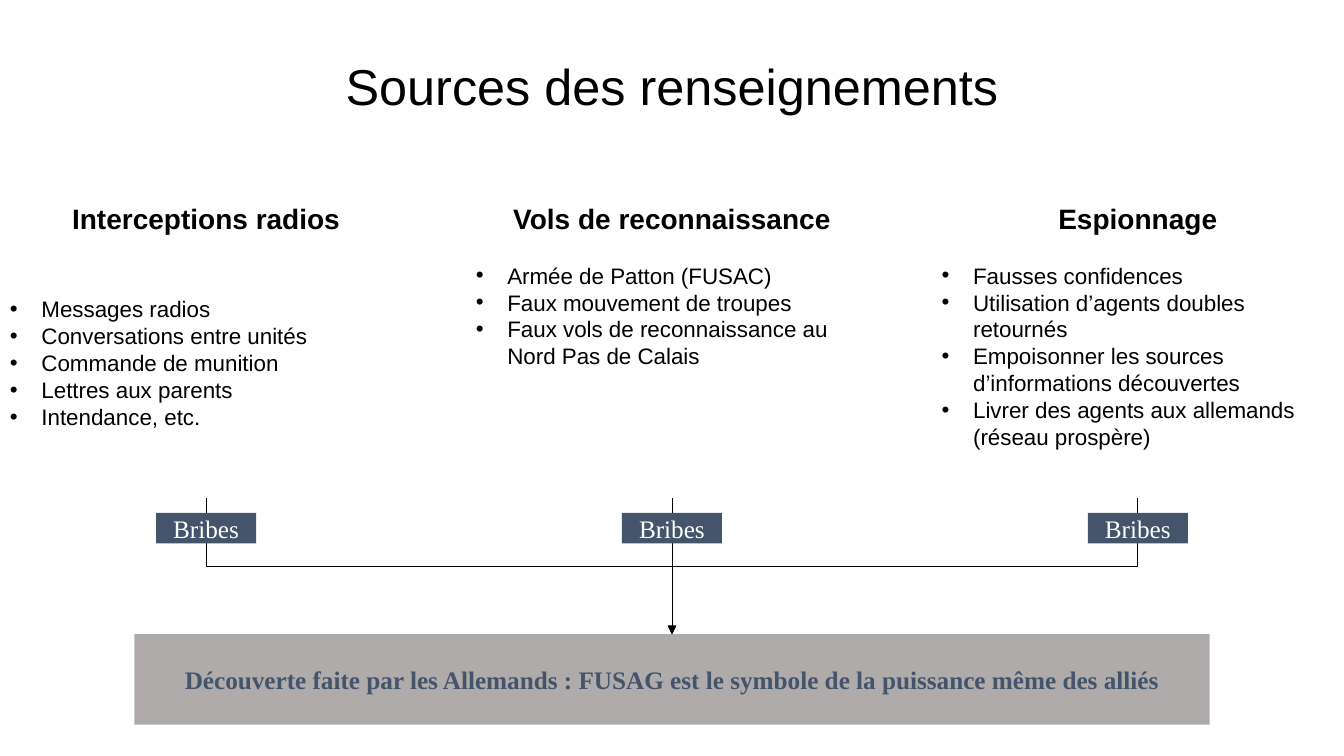
from lxml import etree
from pptx import Presentation
from pptx.dml.color import RGBColor
from pptx.enum import shapes, text
from pptx.oxml import ns
from pptx.util import Pt

TITLE = "Sources des renseignements"
# heading, space below the heading, bullets
COLUMNS = [
    ("Interceptions radios", 43.2, [
        "Messages radios", "Conversations entre unités", "Commande de munition",
        "Lettres aux parents", "Intendance, etc."]),
    ("Vols de reconnaissance", 19.1, [
        "Armée de Patton (FUSAC)", "Faux mouvement de troupes",
        "Faux vols de reconnaissance au Nord Pas de Calais"]),
    ("Espionnage", 19.1, [
        "Fausses confidences", "Utilisation d’agents doubles retournés",
        "Empoisonner les sources d’informations découvertes",
        "Livrer des agents aux allemands (réseau prospère)"]),
]
LABEL = "Bribes"
CONCLUSION = ("Découverte faite par les Allemands : FUSAG est le symbole "
              "de la puissance même des alliés")

COLORS = {"black": "000000", "slate": "44546A", "gray": "AFABAB", "white": "FFFFFF"}
FORMATS = {
    "title": {"name": "Arial", "size": Pt(36), "color": "black"},
    "heading": {"name": "Arial", "size": Pt(20), "bold": True, "color": "black"},
    "bullet": {"name": "Arial", "size": Pt(16), "color": "black"},
    "label": {"name": "Times New Roman", "size": Pt(18), "color": "white"},
    "conclusion": {"name": "Times New Roman", "size": Pt(18), "bold": True,
                   "color": "slate"},
}
WIDTH, HEIGHT = 960, 540
COLUMN_TOP, COLUMN_WIDTH, COLUMN_HEIGHT = 140.4, 294.5, 215.3
LABEL_TOP, LABEL_WIDTH, LABEL_HEIGHT = 366.3, 71.5, 21.9
BOX_TOP, BOX_WIDTH, BOX_HEIGHT = 452.9, 768, 64.8
INDENT = 22.5


def color(name):
    return RGBColor.from_string(COLORS[name])


def write(paragraph, content, style, centered=True):
    run = paragraph.add_run()
    run.text = content
    for key, value in FORMATS[style].items():
        if key == "color":
            run.font.color.rgb = color(value)
        else:
            setattr(run.font, key, value)
    paragraph.alignment = text.PP_ALIGN.CENTER if centered else text.PP_ALIGN.LEFT


def add_bullet(paragraph):
    properties = paragraph._p.get_or_add_pPr()
    properties.set("marL", str(Pt(INDENT)))
    properties.set("indent", str(-Pt(INDENT)))
    etree.SubElement(properties, ns.qn("a:buFont")).set("typeface", "Arial")
    etree.SubElement(properties, ns.qn("a:buChar")).set("char", "•")


def add_text_box(slide, left, top, width, height):
    frame = slide.shapes.add_textbox(Pt(left), Pt(top), Pt(width), Pt(height)).text_frame
    frame.word_wrap = True
    return frame


def add_box(slide, center, top, width, height, fill, content, style):
    shape = slide.shapes.add_shape(
        shapes.MSO_SHAPE.RECTANGLE, Pt(center - width / 2), Pt(top), Pt(width), Pt(height))
    shape.shadow.inherit = False
    shape.fill.solid()
    shape.fill.fore_color.rgb = color(fill)
    shape.line.fill.background()
    shape.text_frame.word_wrap = True
    shape.text_frame.vertical_anchor = text.MSO_ANCHOR.MIDDLE
    write(shape.text_frame.paragraphs[0], content, style)


def add_arrow(slide, start, end, top, bottom):
    """Draw a downward arrow; an elbow is a turned frame about its midpoint."""
    if start == end:
        kind, rotation = shapes.MSO_CONNECTOR.STRAIGHT, 0
        points = (start, top, end, bottom)
    else:
        side = 1 if end > start else -1
        kind, rotation = shapes.MSO_CONNECTOR.ELBOW, 180 + 90 * side
        middle_x, middle_y = (start + end) / 2, (top + bottom) / 2
        half_drop, half_run = side * (bottom - top) / 2, abs(end - start) / 2
        points = (middle_x + half_drop, middle_y - half_run,
                  middle_x - half_drop, middle_y + half_run)
    connector = slide.shapes.add_connector(kind, *map(Pt, points))
    connector.line.color.rgb = color("black")
    connector.line.width = Pt(0.5)
    properties = connector._element.spPr
    properties.find(ns.qn("a:xfrm")).set("rot", str(rotation * 60000))
    line = properties.find(ns.qn("a:ln"))
    etree.SubElement(line, ns.qn("a:tailEnd")).set("type", "triangle")
    etree.SubElement(properties, ns.qn("a:effectLst"))


def add_column(slide, left, heading, gap, bullets):
    frame = add_text_box(slide, left, COLUMN_TOP, COLUMN_WIDTH, COLUMN_HEIGHT)
    write(frame.paragraphs[0], heading, "heading")
    for index, bullet in enumerate(bullets):
        paragraph = frame.add_paragraph()
        write(paragraph, bullet, "bullet", centered=False)
        if index == 0:
            paragraph.space_before = Pt(gap)
        add_bullet(paragraph)


def main():
    presentation = Presentation()
    presentation.slide_width, presentation.slide_height = Pt(WIDTH), Pt(HEIGHT)
    slide = presentation.slides.add_slide(presentation.slide_layouts[6])

    title = add_text_box(slide, 0, 23, WIDTH, 75.6)
    title.vertical_anchor = text.MSO_ANCHOR.MIDDLE
    write(title.paragraphs[0], TITLE, "title")

    step = (WIDTH - COLUMN_WIDTH) / (len(COLUMNS) - 1)
    centers = [COLUMN_WIDTH / 2 + index * step for index in range(len(COLUMNS))]
    for center, column in zip(centers, COLUMNS):
        add_column(slide, center - COLUMN_WIDTH / 2, *column)
    add_box(slide, WIDTH / 2, BOX_TOP, BOX_WIDTH, BOX_HEIGHT, "gray",
            CONCLUSION, "conclusion")
    for center in centers:
        add_arrow(slide, center, WIDTH / 2, COLUMN_TOP + COLUMN_HEIGHT, BOX_TOP)
    for center in centers:
        add_box(slide, center, LABEL_TOP, LABEL_WIDTH, LABEL_HEIGHT, "slate",
                LABEL, "label")
    presentation.save("out.pptx")


if __name__ == "__main__":
    main()
